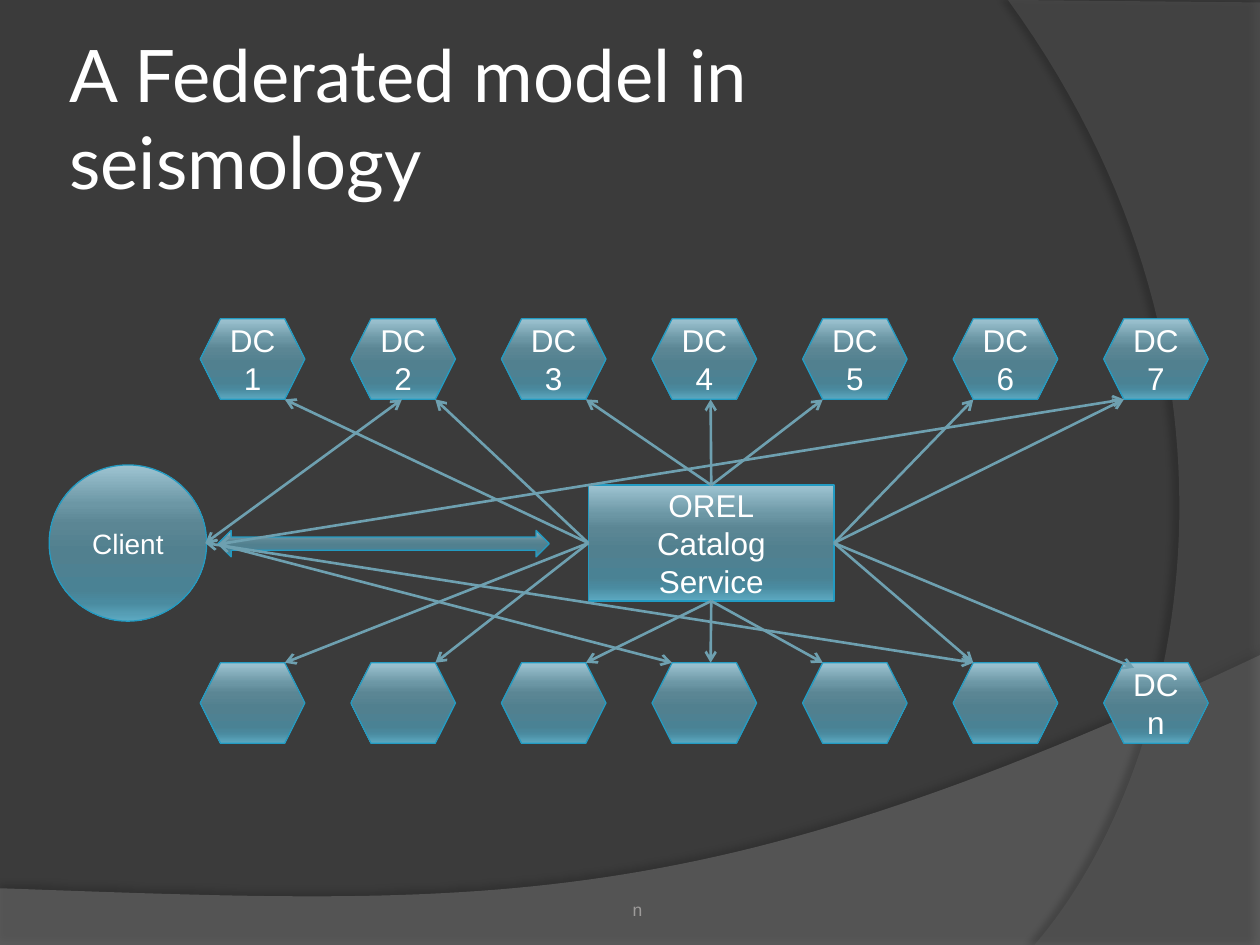
import pptx
import pptx.dml.color
import pptx.enum.shapes
import pptx.enum.text
import pptx.oxml
import pptx.oxml.ns
import pptx.util

Inches, Pt = pptx.util.Inches, pptx.util.Pt
SHAPE = pptx.enum.shapes.MSO_SHAPE
ANCHOR = pptx.enum.text.MSO_ANCHOR
ALIGN = pptx.enum.text.PP_ALIGN
qn = pptx.oxml.ns.qn

TITLE = "A Federated model in seismology"
FOOTER = "n"
CLIENT = ["Client"]
CATALOG = ["OREL", "Catalog Service"]
UPPER_CENTERS = ["DC1", "DC2", "DC3", "DC4", "DC 5", "DC 6", "DC 7"]
LOWER_CENTERS = ["", "", "", "", "", "", "DC n"]

GLOSS = [(0, "9EC4D2"), (25, "6C97A5"), (38, "5B8694"), (55, "51808F"),
         (80, "4A8294"), (88, "4A8BA0"), (100, "5DAAC2")]
EDGE, LINK, WHITE = "239BC2", "6EA0B0", "FFFFFF"

UPPER_TOP, LOWER_TOP = 2.53, 5.26
CENTER_LEFT, CENTER_PITCH = 1.59, 1.195
CENTER_W, CENTER_H, CORNER = 0.83, 0.64, 0.16
UPPER_EDGE = UPPER_TOP + CENTER_H

TOP, LEFT, BOTTOM, RIGHT = range(4)
MIDDLE_X = 5.64


def corner_x(number, side):
    left = CENTER_LEFT + (number - 1) * CENTER_PITCH
    return left + (CORNER if side == LEFT else CENTER_W - CORNER)


CATALOG_LINKS = [
    (side, x, y)
    for y, outer_side in ((UPPER_EDGE, TOP), (LOWER_TOP, BOTTOM))
    for side, x in (
        (LEFT, corner_x(1, RIGHT)), (LEFT, corner_x(2, RIGHT)),
        (outer_side, corner_x(3, RIGHT)), (outer_side, MIDDLE_X),
        (outer_side, corner_x(5, LEFT)), (RIGHT, corner_x(6, LEFT)))
] + [(RIGHT, corner_x(7, LEFT), UPPER_EDGE), (RIGHT, 9, 5.3)]

CLIENT_LINKS = [
    ((1.63, 4.31), (3.19, UPPER_EDGE)),
    ((1.73, 4.32), (corner_x(4, LEFT), LOWER_TOP)),
    ((1.63, 4.31), (corner_x(6, LEFT), LOWER_TOP)),
    ((1.73, 4.32), (corner_x(7, LEFT), UPPER_EDGE)),
]


def color(hex_text):
    return pptx.dml.color.RGBColor.from_string(hex_text)


def add_xml(parent, tag, **attributes):
    child = parent.makeelement(qn(tag), attributes)
    parent.append(child)
    return child


def add_run(paragraph, text, size, font, hex_text):
    run = paragraph.add_run()
    run.text = text
    run.font.size = Pt(size)
    run.font.name = font
    run.font.color.rgb = color(hex_text)


def set_insets(frame, left, top, right, bottom):
    frame.margin_left, frame.margin_top = Inches(left), Inches(top)
    frame.margin_right, frame.margin_bottom = Inches(right), Inches(bottom)


def curve(start, first, second, end, steps=60):
    for step in range(1, steps + 1):
        t = step / steps
        yield tuple((1 - t) ** 3 * a + 3 * (1 - t) ** 2 * t * b + 3 * (1 - t) * t ** 2 * c + t ** 3 * d
                    for a, b, c, d in zip(start, first, second, end))


def add_sweep(points, hex_text, opacity, shadow_opacity, blur, distance, direction):
    corners = [(Inches(x), Inches(y)) for x, y in points]
    builder = slide.shapes.build_freeform(*corners[0])
    builder.add_line_segments(corners[1:], close=True)
    sweep = builder.convert_to_shape()
    sweep.fill.solid()
    sweep.fill.fore_color.rgb = color(hex_text)
    sweep.line.fill.background()
    fill_color = sweep._element.spPr.find(qn("a:solidFill"))[0]
    add_xml(fill_color, "a:alpha", val=str(opacity * 1000))
    effects = add_xml(sweep._element.spPr, "a:effectLst")
    shadow = add_xml(effects, "a:outerShdw", blurRad=str(Pt(blur)), dist=str(Pt(distance)),
                     dir=str(direction * 60000), algn="ctr", rotWithShape="0")
    shadow_color = add_xml(shadow, "a:srgbClr", val="000000")
    add_xml(shadow_color, "a:alpha", val=str(shadow_opacity * 1000))


def add_glossy(kind, left, top, width, height, lines=(), size=18):
    glossy = slide.shapes.add_shape(kind, Inches(left), Inches(top), Inches(width), Inches(height))
    glossy.shadow.inherit = False
    glossy.fill.gradient()
    glossy.fill.gradient_angle = 270
    stops = glossy._element.spPr.find(qn("a:gradFill")).find(qn("a:gsLst"))
    for stop in list(stops):
        stops.remove(stop)
    for position, hex_text in GLOSS:
        add_xml(add_xml(stops, "a:gs", pos=str(position * 1000)), "a:srgbClr", val=hex_text)
    glossy.line.color.rgb = color(EDGE)
    glossy.line.width = Pt(0.75)
    frame = glossy.text_frame
    frame.vertical_anchor = ANCHOR.MIDDLE
    for index, text in enumerate(lines):
        paragraph = frame.add_paragraph() if index else frame.paragraphs[0]
        paragraph.alignment = ALIGN.CENTER
        add_run(paragraph, text, size, "Arial", WHITE)
    return glossy


def add_link(start, end, arrows):
    link = slide.shapes.add_connector(pptx.enum.shapes.MSO_CONNECTOR.STRAIGHT,
                                      *(Inches(value) for value in (*start, *end)))
    link.line.color.rgb = color(LINK)
    link.line.width = Pt(1.5)
    for arrow in arrows:
        add_xml(link.line._get_or_add_ln(), arrow, type="arrow")
    add_xml(link._element.spPr, "a:effectLst")
    return link


deck = pptx.Presentation()
deck.slide_width, deck.slide_height = Inches(10), Inches(7.5)
slide = deck.slides.add_slide(deck.slide_layouts[5])
slide.background.fill.solid()
slide.background.fill.fore_color.rgb = color("3B3B3B")

add_sweep([(0, 7.05), (0, 7.5), (10, 7.5), (10, 5.2),
           *curve((10, 5.2), (5.59, 7.29), (3.91, 7.19), (0, 7.05))],
          "7F7F7F", 45, 35, 4, 3.5, 270)
add_sweep([(10, 0.02), (10, 7.5), (8.21, 7.5),
           *curve((8.21, 7.5), (9.35, 6.19), (10.18, 3), (8, 0))],
          "5E5E5E", 40, 45, 4, 4, 180)

title = slide.shapes.title
title.left, title.top, title.width, title.height = (Inches(v) for v in (0.5, 0.3, 8.17, 1.25))
title.text_frame.word_wrap = True
title.text_frame.auto_size = pptx.enum.text.MSO_AUTO_SIZE.NONE
title.text_frame.vertical_anchor = ANCHOR.MIDDLE
set_insets(title.text_frame, 0.05, 0.05, 0.05, 0.05)
title.text_frame.paragraphs[0].alignment = ALIGN.LEFT
add_run(title.text_frame.paragraphs[0], TITLE, 41.4, "Lato", WHITE)

add_glossy(SHAPE.OVAL, 0.39, 3.69, 1.25, 1.24, CLIENT, 16)
for row_top, centers in ((UPPER_TOP, UPPER_CENTERS), (LOWER_TOP, LOWER_CENTERS)):
    for column, center in enumerate(centers):
        add_glossy(SHAPE.HEXAGON, CENTER_LEFT + column * CENTER_PITCH, row_top,
                   CENTER_W, CENTER_H, [center] if center else [])
catalog = add_glossy(SHAPE.RECTANGLE, 4.67, 3.85, 1.95, 0.92, CATALOG)

for side, x, y in CATALOG_LINKS:
    add_link((MIDDLE_X, 4.31), (x, y), ["a:tailEnd"]).begin_connect(catalog, side)
add_glossy(SHAPE.LEFT_RIGHT_ARROW, 1.73, 4.21, 2.63, 0.21)
for start, end in CLIENT_LINKS:
    add_link(start, end, ["a:headEnd", "a:tailEnd"])

footer = slide.shapes.add_textbox(Inches(1.02), Inches(7), Inches(8.08), Inches(0.3)).text_frame
footer.word_wrap = True
footer.vertical_anchor = ANCHOR.BOTTOM
set_insets(footer, 0, 0.05, 0, 0)
footer.paragraphs[0].alignment = ALIGN.CENTER
add_run(footer.paragraphs[0], FOOTER, 10, "Arial", "9D9B9A")

deck.save("out.pptx")
